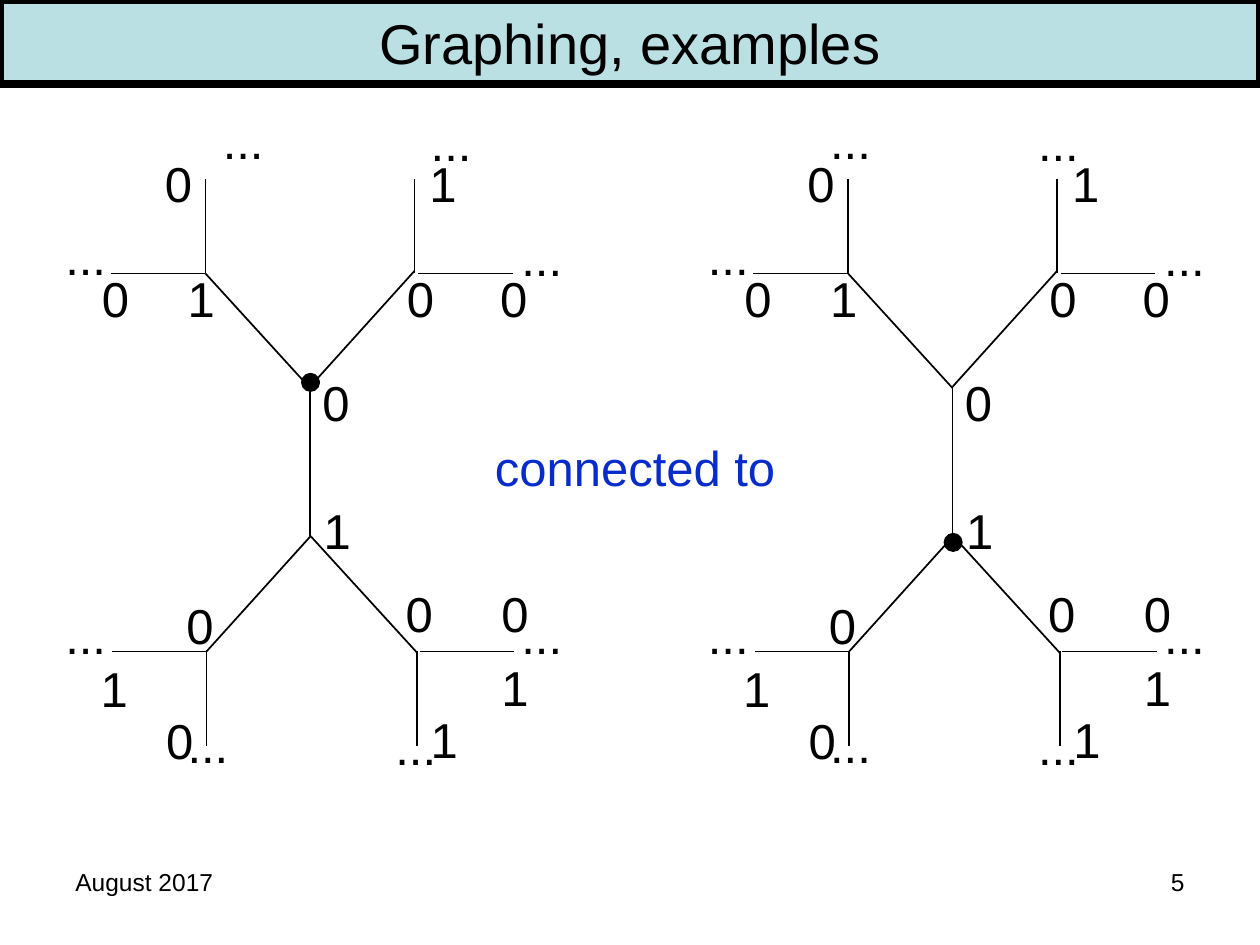
from pptx import Presentation
from pptx.dml.color import RGBColor
from pptx.enum.shapes import MSO_CONNECTOR, MSO_SHAPE
from pptx.enum.text import MSO_ANCHOR, MSO_AUTO_SIZE, PP_ALIGN
from pptx.oxml.ns import qn
from pptx.util import Inches, Pt
from lxml.etree import SubElement

COLORS = {"ink": "000000", "band": "BBE0E3", "link": "072CCB"}
SHIFT = 5.1  # from the left tree to the right one

# Left tree: x1, y1, x2, y2
EDGES = [
    (2.46, 3.08, 2.46, 4.25),
    (1.63, 2.17, 2.46, 3.08), (1.63, 1.42, 1.63, 2.17),
    (0.88, 2.17, 1.63, 2.17),
    (3.29, 2.15, 2.46, 3.07), (3.29, 1.42, 3.29, 2.17),
    (3.32, 2.17, 4.07, 2.17),
    (1.64, 5.17, 2.47, 4.25), (1.64, 5.92, 1.64, 5.17),
    (0.89, 5.17, 1.64, 5.17),
    (3.31, 5.18, 2.47, 4.26), (3.31, 5.92, 3.31, 5.17),
    (3.33, 5.17, 4.08, 5.17),
]
# Left tree: the corners of each label's box
LABELS = {
    "0": [(2.46, 2.91), (3.12, 4.58), (3.88, 4.58), (3.13, 2.08), (3.87, 2.08),
          (0.71, 2.08), (1.21, 1.17), (1.38, 4.68), (1.22, 5.59)],
    "1": [(0.7, 5.18), (3.88, 5.17), (3.32, 5.58), (3.31, 1.17), (2.47, 3.92),
          (1.39, 2.08)],
    "...": [(0.42, 1.75), (4.04, 1.76), (4.04, 4.76), (3.04, 5.64),
            (1.39, 5.62), (0.42, 4.76)],
}
WIDTHS = {"0": 0.42, "1": 0.42, "...": 0.53}


def color(name):
    return RGBColor.from_string(COLORS[name])


def paint(shape, fill, width):
    shape.fill.solid()
    shape.fill.fore_color.rgb = color(fill)
    shape.line.color.rgb = color("ink")
    shape.line.width = Pt(width)


def write(frame, text, size, ink="ink", align=PP_ALIGN.LEFT):
    para = frame.paragraphs[0]
    para.alignment = align
    run = para.add_run()
    run.text = text
    run.font.name = "Arial"
    run.font.size = Pt(size)
    run.font.color.rgb = color(ink)


def add_title(slide, text):
    title = slide.shapes.title
    title.left, title.top = Inches(0), Inches(0)
    title.width, title.height = Inches(10), Inches(0.67)
    paint(title, "band", 4.5)
    frame = title.text_frame
    frame.auto_size = MSO_AUTO_SIZE.NONE
    frame.vertical_anchor = MSO_ANCHOR.MIDDLE
    write(frame, text, 32, align=PP_ALIGN.CENTER)


def add_foot(slide, text, x, align):
    box = slide.shapes.add_textbox(
        Inches(x), Inches(6.83), Inches(2.33), Inches(0.52))
    box.text_frame.word_wrap = True
    write(box.text_frame, text, 14, align=align)


def add_label(shapes, text, x, y, width, ink="ink"):
    box = shapes.add_textbox(Inches(x), Inches(y), Inches(width), Inches(0.57))
    box.text_frame.word_wrap = False
    box.text_frame.auto_size = MSO_AUTO_SIZE.SHAPE_TO_FIT_TEXT
    write(box.text_frame, text, 28, ink)


def add_edge(shapes, x1, y1, x2, y2):
    edge = shapes.add_connector(
        MSO_CONNECTOR.STRAIGHT, Inches(x1), Inches(y1), Inches(x2), Inches(y2))
    edge.line.color.rgb = color("ink")
    edge.line.width = Pt(1)
    SubElement(edge._element.spPr, qn("a:effectLst"))


def add_root(shapes, x, y):
    """Mark the root of a tree with a dot."""
    dot = shapes.add_shape(
        MSO_SHAPE.OVAL, Inches(x), Inches(y), Inches(0.13), Inches(0.13))
    dot.shadow.inherit = False
    paint(dot, "ink", 1.5)


def add_tree(slide, dx, root, tops):
    """Draw the tree moved right by dx; tops are the dots above it."""
    shapes = slide.shapes.add_group_shape().shapes
    for x1, y1, x2, y2 in EDGES:
        add_edge(shapes, x1 + dx, y1, x2 + dx, y2)
    for text, spots in LABELS.items():
        for x, y in spots:
            add_label(shapes, text, x + dx, y, WIDTHS[text])
    add_root(shapes, *root)
    for x, y in tops:
        add_label(slide.shapes, "...", x, y, WIDTHS["..."])


def main():
    deck = Presentation()
    deck.slide_width, deck.slide_height = Inches(10), Inches(7.5)
    slide = deck.slides.add_slide(deck.slide_layouts[5])
    add_title(slide, "Graphing, examples")
    add_foot(slide, "August 2017", 0.5, PP_ALIGN.LEFT)
    add_foot(slide, "5", 7.17, PP_ALIGN.RIGHT)
    add_tree(slide, 0, (2.4, 2.97), [(1.67, 0.83), (3.32, 0.84)])
    add_tree(slide, SHIFT, (7.5, 4.24), [(6.49, 0.83), (8.14, 0.84)])
    add_label(slide.shapes, "connected to", 3.83, 3.42, 2.45, "link")
    deck.save("out.pptx")


if __name__ == "__main__":
    main()
